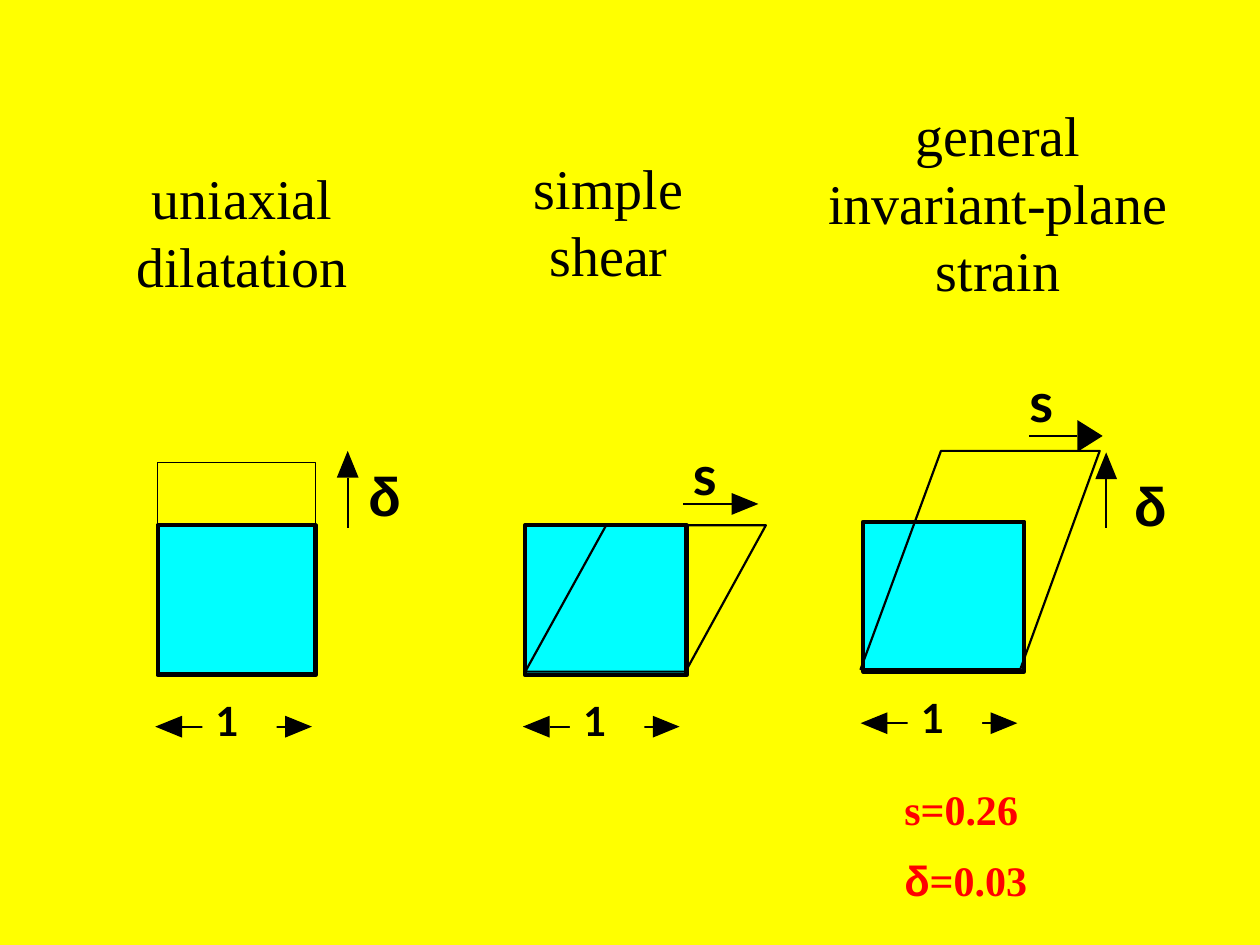
"""Build a slide comparing three kinds of invariant-plane strain."""
from math import hypot

from lxml.etree import SubElement
from pptx import Presentation
from pptx.dml.color import RGBColor
from pptx.enum.shapes import MSO_CONNECTOR, MSO_SHAPE
from pptx.enum.text import MSO_ANCHOR, PP_ALIGN
from pptx.oxml.ns import qn
from pptx.util import Cm, Pt

BLACK, RED, YELLOW, CYAN = "000000", "FF0000", "FFFF00", "00FFFF"
SERIF, SANS, GREEK = "Times New Roman", "Lato", "Arial"
HEADING = {"size": Pt(32), "name": SERIF, "bold": False}
SYMBOL = {"size": Pt(31), "bold": True}
UNIT = {"size": Pt(23), "name": SANS, "bold": True}
VALUE = {"size": Pt(24), "bold": True}
HEAD_LENGTH, HEAD_HALF = 0.54, 0.22

PANELS = [
    {
        "heading": ("uniaxial dilatation", (2.34, 3.18, 5.08, 2.97)),
        "square": (3.18, 10.59, 3.18, 3.02),
        "strained": [(3.18, 13.56), (3.18, 9.32), (6.36, 9.32), (6.36, 13.56)],
        "strained_width": 0.75,
        "arrows": [((7.01, 10.64), (7.01, 9.09), HEAD_LENGTH, HEAD_HALF)],
        "symbols": [("δ", GREEK, (7.42, 9.32))],
    },
    {
        "heading": ("simple shear", (9.73, 2.97, 5.08, 2.97)),
        "square": (10.59, 10.59, 3.25, 3.02),
        "strained": [(10.59, 13.54), (12.22, 10.59), (15.44, 10.59), (13.82, 13.54)],
        "strained_width": 1.25,
        "arrows": [((13.77, 10.16), (15.29, 10.16), HEAD_LENGTH, HEAD_HALF)],
        "symbols": [("s", SANS, (13.97, 8.89))],
    },
    {
        "heading": ("general invariant-plane strain", (16.31, 1.91, 7.62, 4.32)),
        "square": (17.4, 10.52, 3.25, 3.02),
        "strained": [(17.35, 13.49), (18.97, 9.09), (22.17, 9.09), (20.57, 13.49)],
        "strained_width": 1.25,
        "arrows": [
            ((20.75, 8.79), (22.23, 8.79), 0.51, 0.32),
            ((22.3, 10.64), (22.3, 9.12), HEAD_LENGTH, HEAD_HALF),
        ],
        "symbols": [("s", SANS, (20.75, 7.42)), ("δ", GREEK, (22.86, 9.53))],
    },
]
VALUES = [[("s=0.26", SERIF)], [("δ", GREEK), ("=0.03", SERIF)]]
VALUES_BOX = (17.98, 15.67, 3.61, 2.79)


def color(hex_code):
    return RGBColor.from_string(hex_code)


def paint(shape, fill=None, width=None):
    shape.shadow.inherit = False
    if fill:
        shape.fill.solid()
        shape.fill.fore_color.rgb = color(fill)
    else:
        shape.fill.background()
    if width:
        shape.line.color.rgb = color(BLACK)
        shape.line.width = Pt(width)
    else:
        shape.line.fill.background()


def add_box(slide, box, fill, width=None):
    rectangle = slide.shapes.add_shape(MSO_SHAPE.RECTANGLE, *map(Cm, box))
    paint(rectangle, fill, width)


def add_outline(slide, points, fill=None, width=None):
    start, *rest = [(Cm(x), Cm(y)) for x, y in points]
    builder = slide.shapes.build_freeform(*start)
    builder.add_line_segments(rest, close=True)
    paint(builder.convert_to_shape(), fill, width)


def add_shaft(slide, start, end):
    shaft = slide.shapes.add_connector(MSO_CONNECTOR.STRAIGHT, *map(Cm, start + end))
    shaft.line.color.rgb = color(BLACK)
    shaft.line.width = Pt(1.25)
    SubElement(shaft.element.spPr, qn("a:effectLst"))


def add_head(slide, tail, tip, length, half):
    """Draw a filled arrowhead and return the middle of its base."""
    (x0, y0), (x1, y1) = tail, tip
    span = hypot(x1 - x0, y1 - y0)
    dx, dy = (x1 - x0) / span, (y1 - y0) / span
    x, y = x1 - dx * length, y1 - dy * length
    add_outline(slide, [(x - dy * half, y + dx * half), tip,
                        (x + dy * half, y - dx * half)], BLACK)
    return x, y


def add_arrow(slide, tail, tip, length, half):
    add_shaft(slide, tail, add_head(slide, tail, tip, length, half))


def add_text(slide, box, lines, style, hex_code=BLACK, align=PP_ALIGN.LEFT, tight=False):
    frame = slide.shapes.add_textbox(*map(Cm, box)).text_frame
    layout = {"word_wrap": not tight, "vertical_anchor": MSO_ANCHOR.TOP}
    if tight:
        layout |= dict.fromkeys(
            ("margin_left", "margin_top", "margin_right", "margin_bottom"), 0)
    for key, setting in layout.items():
        setattr(frame, key, setting)
    for index, parts in enumerate(lines):
        paragraph = frame.add_paragraph() if index else frame.paragraphs[0]
        paragraph.alignment = align
        if index:
            paragraph.space_before = int(style["size"] / 2)
        for words, font_name in parts:
            run = paragraph.add_run()
            run.text = words
            for key, setting in (style | {"name": font_name}).items():
                setattr(run.font, key, setting)
            run.font.color.rgb = color(hex_code)


def add_unit_width(slide, square):
    """Mark the side of the square as one unit long."""
    left, top, _, height = square
    x, y = left - 0.05, top + height + 1.04
    ends = (x, y), (x + 3.16, y)
    bases = [add_head(slide, tail, tip, HEAD_LENGTH, HEAD_HALF)
             for tail, tip in (ends[::-1], ends)]
    add_shaft(slide, *bases)
    add_box(slide, (x + 0.95, y - 0.84, 1.5, 1.5), YELLOW)
    add_text(slide, (x + 1.22, y - 0.61, 0.53, 0.97), [[("1", SANS)]], UNIT, tight=True)


def add_panel(slide, panel):
    add_unit_width(slide, panel["square"])
    add_box(slide, panel["square"], CYAN, 2.5)
    add_outline(slide, panel["strained"], width=panel["strained_width"])
    for arrow in panel["arrows"]:
        add_arrow(slide, *arrow)
    for symbol, font_name, corner in panel["symbols"]:
        add_text(slide, (*corner, 0.56, 1.32), [[(symbol, font_name)]], SYMBOL, tight=True)
    words, box = panel["heading"]
    add_text(slide, box, [[(words, SERIF)]], HEADING, align=PP_ALIGN.CENTER)


def main():
    deck = Presentation()
    deck.slide_width, deck.slide_height = Cm(25.4), Cm(19.05)
    slide = deck.slides.add_slide(deck.slide_layouts[6])
    slide.background.fill.solid()
    slide.background.fill.fore_color.rgb = color(YELLOW)
    for panel in PANELS:
        add_panel(slide, panel)
    add_text(slide, VALUES_BOX, VALUES, VALUE, RED)
    deck.save("out.pptx")


if __name__ == "__main__":
    main()
